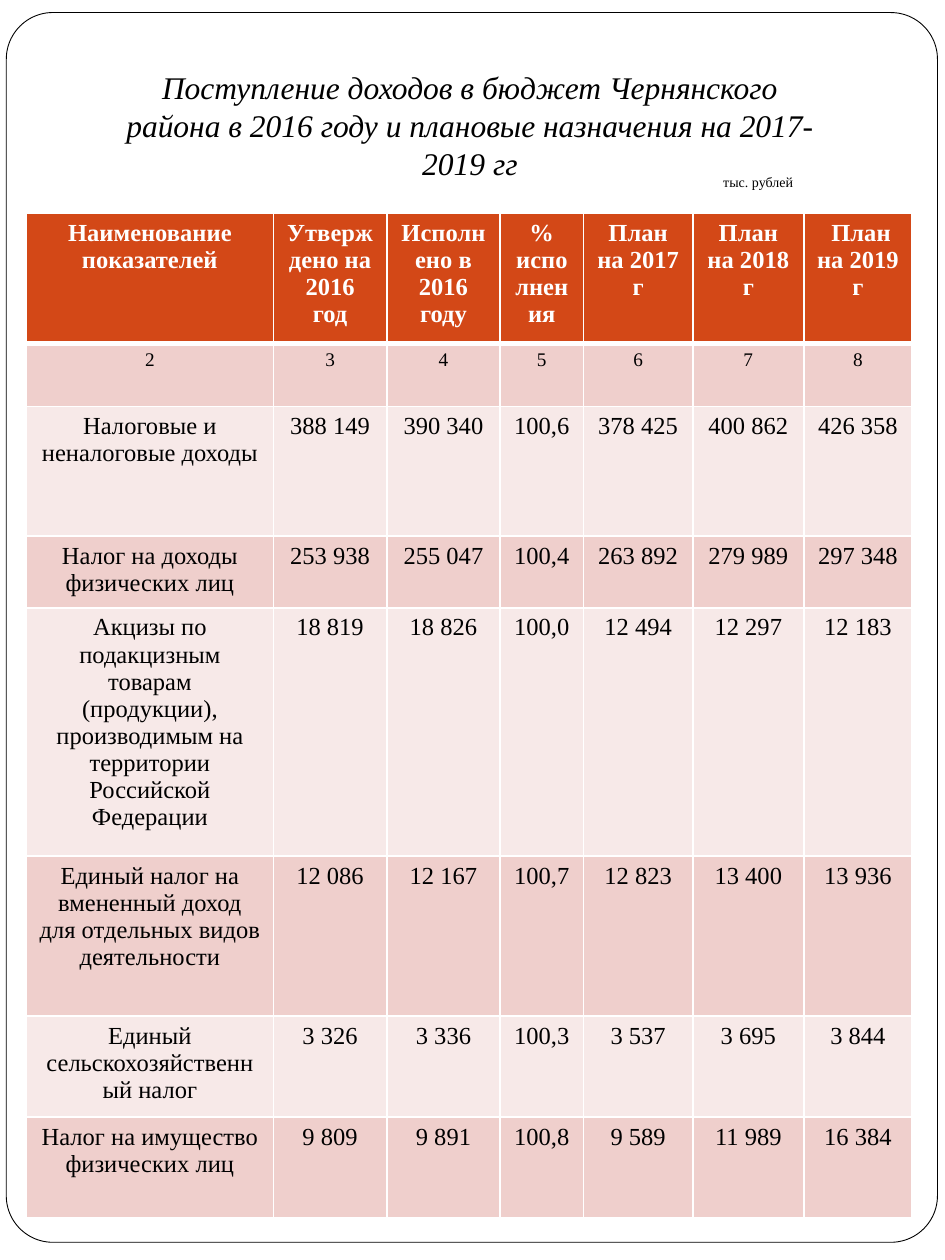
import pptx
import pptx.util
import pptx.dml.color
import pptx.enum.shapes
import pptx.enum.text
import pptx.oxml
import pptx.oxml.ns

Inches = pptx.util.Inches
Pt = pptx.util.Pt
FONT = "Times New Roman"
TITLE = ("Поступление доходов в бюджет Чернянского района в 2016 году "
         "и плановые назначения на 2017-2019 гг")
UNIT = "тыс. рублей"
ROWS = [
    ("Наименование показателей", "Утверждено на 2016 год", "Исполнено в 2016 году",
     "% исполнения", "План на 2017 г", "План на 2018 г", " План на 2019 г"),
    ("2", "3", "4", "5", "6", "7", "8"),
    ("Налоговые и неналоговые доходы", "388 149", "390 340", "100,6",
     "378 425", "400 862", "426 358"),
    ("Налог на доходы физических лиц", "253 938", "255 047", "100,4",
     "263 892", "279 989", "297 348"),
    ("Акцизы по подакцизным товарам (продукции), производимым на территории "
     "Российской Федерации", "18 819", "18 826", "100,0",
     "12 494", "12 297", "12 183"),
    ("Единый налог на вмененный доход для отдельных видов деятельности",
     "12 086", "12 167", "100,7", "12 823", "13 400", "13 936"),
    ("Единый сельскохозяйственный налог", "3 326", "3 336", "100,3",
     "3 537", "3 695", "3 844"),
    ("Налог на имущество физических лиц", "9 809", "9 891", "100,8",
     "9 589", "11 989", "16 384"),
]
WIDTHS = [1.96, 0.9, 0.9, 0.66, 0.87, 0.88, 0.86]
HEIGHTS = [1.03, 0.5, 1.03, 0.57, 1.97, 1.27, 0.8, 0.8]
HEAD, DARK, LIGHT = "D34817", "EFCFCC", "F7E9E8"
CENTER = pptx.enum.text.PP_ALIGN.CENTER


def paint(color, tone):
    color.rgb = pptx.dml.color.RGBColor.from_string(tone)


def fill(item, tone):
    item.fill.solid()
    paint(item.fill.fore_color, tone)


def write(frame, text, size, tone="000000", bold=False, slant=False, align=CENTER):
    para = frame.paragraphs[0]
    para.alignment = align
    run = para.add_run()
    run.text = text
    font = run.font
    font.name, font.size, font.bold, font.italic = FONT, Pt(size), bold, slant
    paint(font.color, tone)


def edge(cell, side, width):
    cell._tc.get_or_add_tcPr().append(pptx.oxml.parse_xml(
        f'<a:ln{side} {pptx.oxml.ns.nsdecls("a")} w="{Pt(width)}"><a:solidFill>'
        f'<a:srgbClr val="FFFFFF"/></a:solidFill></a:ln{side}>'))


def box(left, top, width, height):
    return Inches(left), Inches(top), Inches(width), Inches(height)


deck = pptx.Presentation()
deck.slide_width, deck.slide_height = Inches(7.5), Inches(10)
slide = deck.slides.add_slide(deck.slide_layouts[5])
shapes = slide.shapes
fill(slide.background, "FFFFFF")

panel = shapes.add_shape(pptx.enum.shapes.MSO_SHAPE.ROUNDED_RECTANGLE,
                         *box(0.05, 0.1, 7.39, 9.76))
panel.adjustments[0] = 0.05
panel.shadow.inherit = False
fill(panel, "FFFFFF")
paint(panel.line.color, "000000")
panel.line.width = Pt(0.5)
shapes._spTree.insert(2, panel._element)

title = shapes.title
title.left, title.top, title.width, title.height = box(0.84, 0.91, 5.78, 0.63)
frame = title.text_frame
frame.word_wrap = True
frame.auto_size = pptx.enum.text.MSO_AUTO_SIZE.NONE
frame.vertical_anchor = pptx.enum.text.MSO_ANCHOR.BOTTOM
frame.margin_bottom = Inches(0.1)
write(frame, TITLE, 18, slant=True)

label = shapes.add_textbox(*box(4.61, 1.33, 2.44, 0.23)).text_frame
label.word_wrap = True
label.margin_left = Inches(1.13)
write(label, UNIT, 8, align=pptx.enum.text.PP_ALIGN.LEFT)

table = shapes.add_table(len(ROWS), len(WIDTHS),
                         *box(0.21, 1.69, sum(WIDTHS), sum(HEIGHTS))).table
for col, width in zip(table.columns, WIDTHS):
    col.width = Inches(width)
for i, (row, height) in enumerate(zip(ROWS, HEIGHTS)):
    table.rows[i].height = Inches(height)
    tone = HEAD if i == 0 else DARK if i % 2 else LIGHT
    for j, text in enumerate(row):
        cell = table.cell(i, j)
        for side in "LRTB":
            thick = (i, side) in [(0, "B"), (1, "T")]
            edge(cell, side, 3 if thick else 1)
        fill(cell, tone)
        write(cell.text_frame, text, 11 if i == 1 else 14,
              "000000" if i else "FFFFFF", bold=i == 0)

deck.save("out.pptx")
